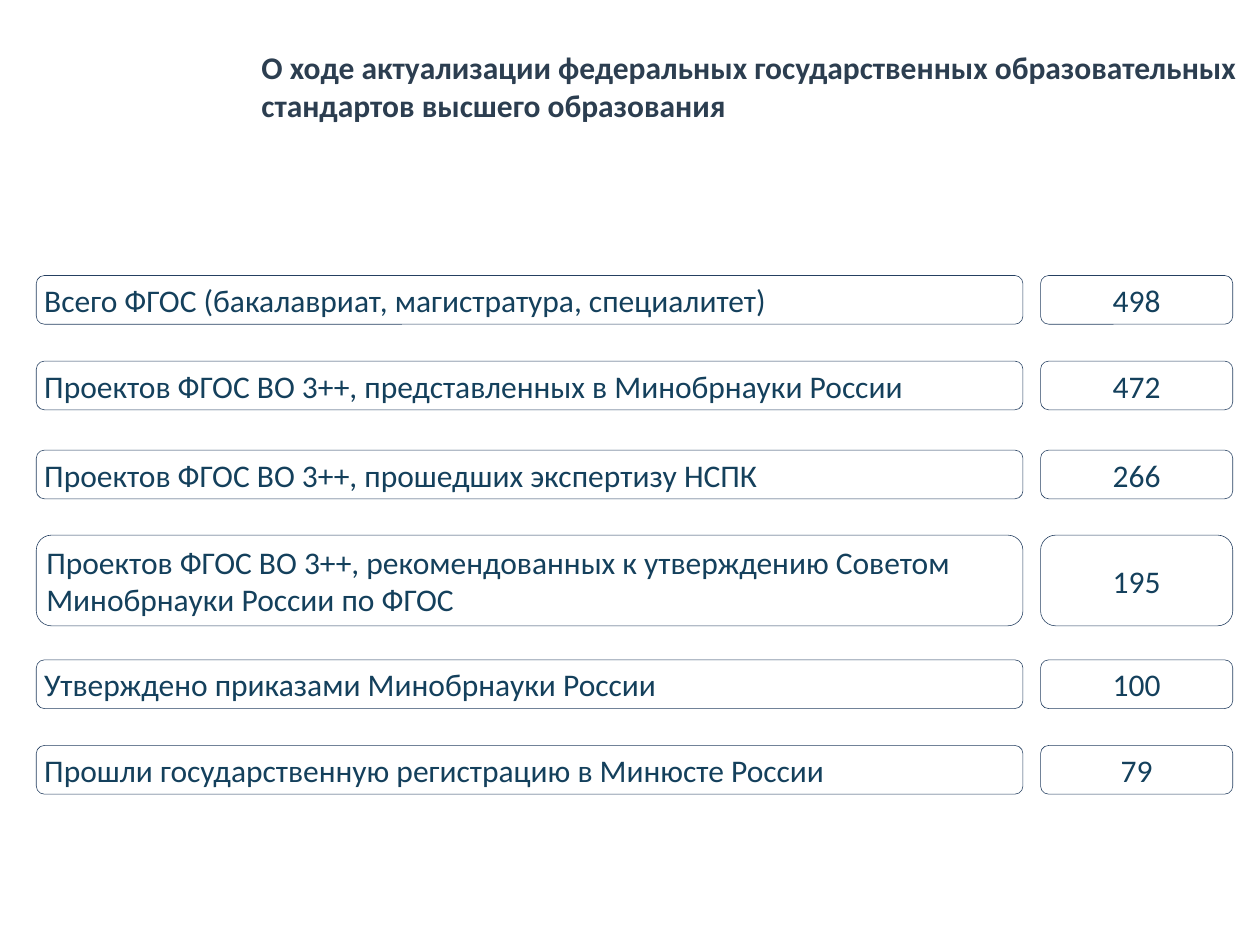
import pptx
import pptx.dml.color
import pptx.enum.shapes
import pptx.enum.text
import pptx.util

Inches = pptx.util.Inches
ALIGN = pptx.enum.text.PP_ALIGN

TITLE = ("О ходе актуализации федеральных государственных образовательных "
         "стандартов высшего образования")
LABEL_LEFT, LABEL_WIDTH = 0.64, 17.4
COUNT_LEFT, COUNT_WIDTH = 18.35, 3.39
LOW, TALL = 0.86, 1.6

# top, height, label, count
ROWS = [
    (4.86, LOW, "Всего ФГОС (бакалавриат, магистратура, специалитет)", "498"),
    (6.37, LOW, "Проектов ФГОС ВО 3++, представленных в Минобрнауки России", "472"),
    (7.94, LOW, "Проектов ФГОС ВО 3++, прошедших экспертизу НСПК", "266"),
    (9.44, TALL, "Проектов ФГОС ВО 3++, рекомендованных к утверждению Советом "
                 "Минобрнауки России по ФГОС", "195"),
    (11.64, LOW, "Утверждено приказами Минобрнауки России", "100"),
    (13.15, LOW, "Прошли государственную регистрацию в Минюсте России", "79"),
]


def color(value):
    return pptx.dml.color.RGBColor.from_string(value)


def write_text(box, text, hex_color="14405C", bold=False, align=ALIGN.LEFT,
               margins=(0.1, 0.05)):
    """Fill a box with one vertically centred paragraph; margins are (side, top)."""
    frame = box.text_frame
    frame.word_wrap = True
    frame.vertical_anchor = pptx.enum.text.MSO_ANCHOR.MIDDLE
    frame.margin_left = frame.margin_right = Inches(margins[0])
    frame.margin_top = frame.margin_bottom = Inches(margins[1])
    para = frame.paragraphs[0]
    para.alignment = align
    span = para.add_run()
    span.text = text
    span.font.name = "Calibri"
    span.font.size = pptx.util.Pt(40)
    span.font.bold = bold
    span.font.color.rgb = color(hex_color)


def add_title(page):
    box = page.shapes.add_textbox(Inches(4.39), Inches(0.7), Inches(17.83), Inches(1.64))
    write_text(box, TITLE, hex_color="2C3E50", bold=True, margins=(0.22, 0.11))


def add_card(page, left, top, width, height, text, **text_format):
    card = page.shapes.add_shape(
        pptx.enum.shapes.MSO_SHAPE.ROUNDED_RECTANGLE,
        Inches(left), Inches(top), Inches(width), Inches(height))
    card.shadow.inherit = False
    card.fill.solid()
    card.fill.fore_color.rgb = color("FFFFFF")
    card.line.color.rgb = color("254061")
    card.line.width = pptx.util.Pt(0.75)
    write_text(card, text, **text_format)


def main():
    deck = pptx.Presentation()
    deck.slide_width = Inches(22.22)
    deck.slide_height = Inches(16.67)
    page = deck.slides.add_slide(deck.slide_layouts[6])
    add_title(page)
    for top, height, label, count in ROWS:
        add_card(page, LABEL_LEFT, top, LABEL_WIDTH, height, label)
        add_card(page, COUNT_LEFT, top, COUNT_WIDTH, height, count, align=ALIGN.CENTER)
    deck.save("out.pptx")


if __name__ == "__main__":
    main()
